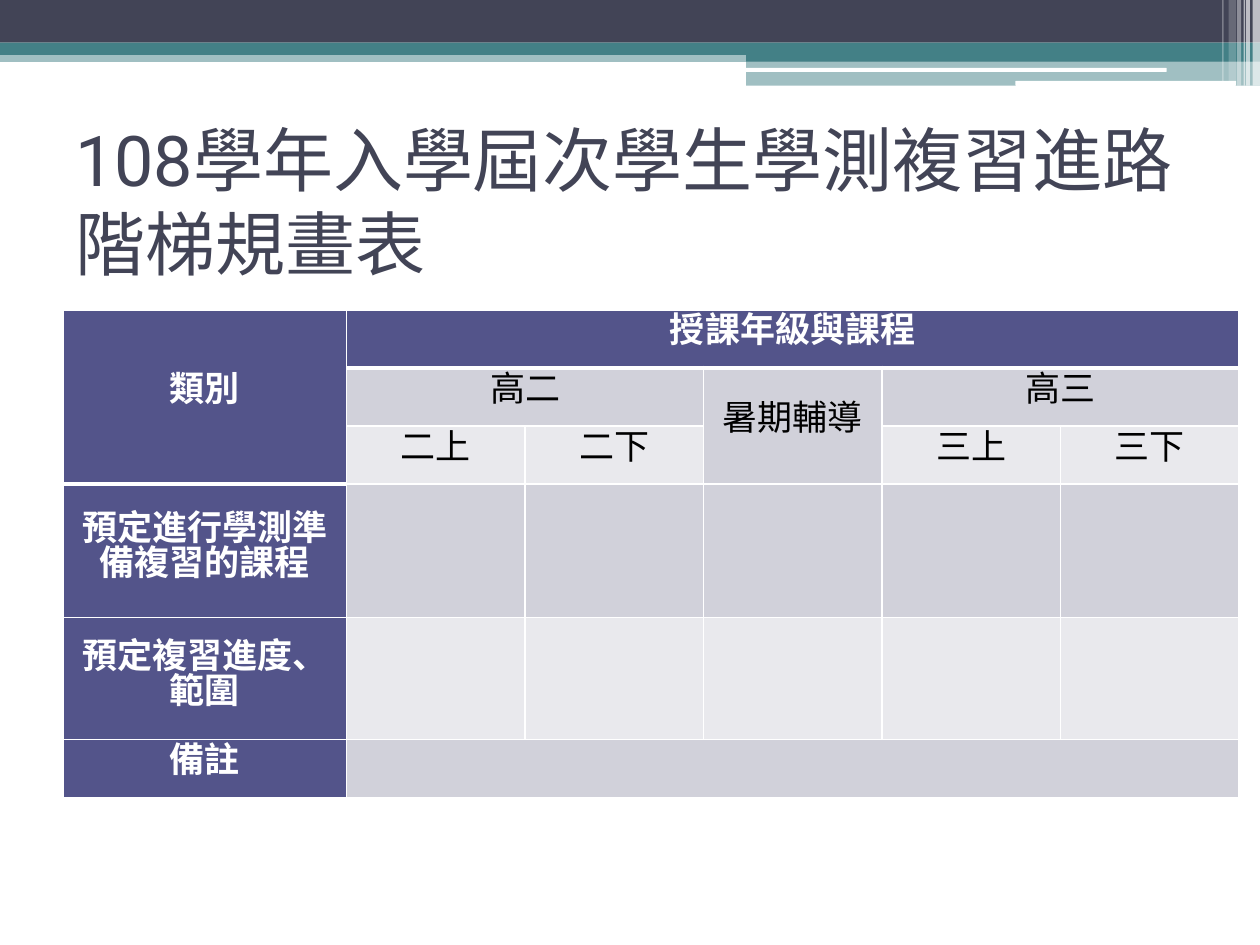
from lxml.etree import SubElement
from pptx import Presentation
from pptx.dml.color import RGBColor
from pptx.enum.shapes import MSO_SHAPE
from pptx.enum.text import MSO_ANCHOR, PP_ALIGN
from pptx.oxml.ns import qn
from pptx.util import Cm, Pt

SLATE, TEAL, WHITE, BLACK = "424456", "438086", "FFFFFF", "000000"
HEADER, BAND_DARK, BAND_LIGHT = "53548A", "D1D1DA", "E9E9ED"


def colour(code):
    return RGBColor.from_string(code)


def style_font(para, name, size, code, bold=False):
    font = para.font
    font.name, font.size, font.bold = name, Pt(size), bold
    font.color.rgb = colour(code)


def add_bar(page, left, top, width, height, code, opacity=100, kind=MSO_SHAPE.RECTANGLE):
    bar = page.shapes.add_shape(kind, Cm(left), Cm(top), Cm(width), Cm(height))
    bar.shadow.inherit = False
    bar.line.fill.background()
    bar.fill.solid()
    bar.fill.fore_color.rgb = colour(code)
    if opacity < 100:
        tint = bar.fill._xPr.find(qn("a:solidFill"))[0]
        SubElement(tint, qn("a:alpha"), val=str(opacity * 1000))


def add_banner(page, left, top, width):
    # Full-width bands: offset, height, colour, opacity
    for offset, height, code, opacity in [
        (1.02, 0.23, TEAL, 50), (0, 0.86, SLATE, 100), (0.86, 0.25, TEAL, 100),
    ]:
        add_bar(page, left, top + offset, width, height, code, opacity)

    # Step on the right side
    step = 15.04
    for offset, height, opacity in [(0.99, 0.25, 100), (1.22, 0.51, 50)]:
        add_bar(page, left + step, top + offset, width - step, height, TEAL, opacity)

    # White rounded stripes
    for x, y, length, height in [(15.01, 1.37, 8.51, 0.08), (20.47, 1.63, 4.45, 0.1)]:
        add_bar(page, left + x, top + y, length, height, WHITE,
                kind=MSO_SHAPE.ROUNDED_RECTANGLE)

    # Upright stripes, placed from the right edge
    for inset, thickness, height, opacity in [
        (0.15, 0.15, 1.73, 65), (0.28, 0.08, 1.73, 65), (0.33, 0.03, 1.73, 60),
        (0.46, 0.08, 1.73, 40), (0.63, 0.15, 1.63, 20), (0.76, 0.03, 1.63, 30),
    ]:
        add_bar(page, left + width - inset, top, thickness, height, WHITE, opacity)


def add_title(page, left, top, width, height):
    box = page.shapes.add_textbox(Cm(left), Cm(top), Cm(width), Cm(height))
    frame = box.text_frame
    frame.word_wrap = True
    frame.vertical_anchor = MSO_ANCHOR.MIDDLE
    frame.text = "108學年入學屆次學生學測複習進路階梯規畫表"
    style_font(frame.paragraphs[0], "Roboto", 40, SLATE)


def add_borders(cell, top, bottom):
    properties = cell._tc.get_or_add_tcPr()
    sides = [("a:lnL", 1), ("a:lnR", 1), ("a:lnT", top), ("a:lnB", bottom)]
    for place, (tag, points) in enumerate(sides):
        line = SubElement(properties, qn(tag), w=str(Pt(points)))
        fill = SubElement(line, qn("a:solidFill"))
        SubElement(fill, qn("a:srgbClr"), val=WHITE)
        properties.insert(place, line)


def is_header_edge(row, column):
    return row == (2 if column == 0 else 0)


def add_plan_table(page, left, top, width):
    heights = [1.17, 1.17, 1.17, 2.69, 2.46, 1.17]
    label_width, terms = 5.72, 5
    term_width = (width - label_width) / terms
    table = page.shapes.add_table(len(heights), terms + 1, Cm(left), Cm(top),
                                  Cm(width), Cm(sum(heights))).table
    for row, height in enumerate(heights):
        table.rows[row].height = Cm(height)
    for index, column in enumerate(table.columns):
        column.width = Cm(term_width if index else label_width)

    # Merged areas: first and last cell
    for first, last in [((0, 0), (2, 0)), ((0, 1), (0, 5)), ((1, 1), (1, 2)),
                        ((1, 3), (2, 3)), ((1, 4), (1, 5)), ((5, 1), (5, 5))]:
        table.cell(*first).merge(table.cell(*last))

    texts = {
        (0, 0): "類別", (0, 1): "授課年級與課程",
        (1, 1): "高二", (1, 3): "暑期輔導", (1, 4): "高三",
        (2, 1): "二上", (2, 2): "二下", (2, 4): "三上", (2, 5): "三下",
        (3, 0): "預定進行學測準備複習的課程", (4, 0): "預定複習進度、範圍", (5, 0): "備註",
    }
    for row in range(len(heights)):
        for column in range(terms + 1):
            cell = table.cell(row, column)
            heading = row == 0 or column == 0
            band = BAND_DARK if row % 2 else BAND_LIGHT
            cell.fill.solid()
            cell.fill.fore_color.rgb = colour(HEADER if heading else band)
            add_borders(cell, 3 if is_header_edge(row - 1, column) else 1,
                        3 if is_header_edge(row, column) else 1)
            cell.margin_left = cell.margin_right = Cm(0.18)
            cell.margin_top = cell.margin_bottom = 0
            cell.vertical_anchor = MSO_ANCHOR.MIDDLE
            if (row, column) in texts:
                cell.text = texts[row, column]
                para = cell.text_frame.paragraphs[0]
                para.alignment = PP_ALIGN.CENTER
                para.line_spacing = Pt(20 if row in (3, 4) else 16)
                style_font(para, "Cambria", 20, WHITE if heading else BLACK, heading)


def main():
    deck = Presentation()
    deck.slide_width, deck.slide_height = Cm(25.4), Cm(19.05)
    page = deck.slides.add_slide(deck.slide_layouts[6])
    add_banner(page, 0, 0, 25.4)
    add_title(page, 1.27, 1.93, 22.86, 4.22)
    add_plan_table(page, 1.27, 6.25, 23.7)
    deck.save("out.pptx")


if __name__ == "__main__":
    main()
